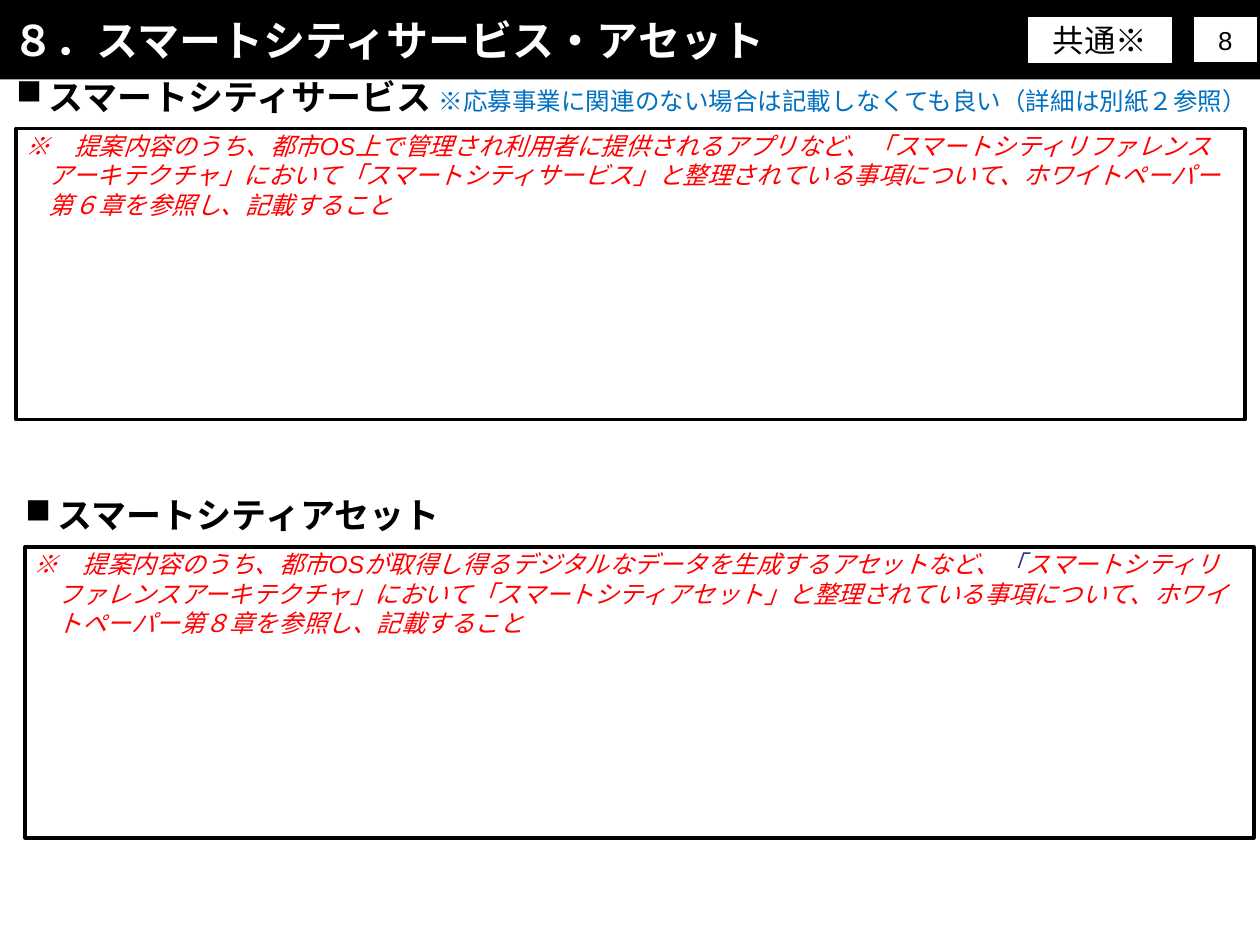
from dataclasses import dataclass
from typing import Optional

from lxml.etree import SubElement
from pptx import Presentation
from pptx.dml.color import RGBColor
from pptx.enum.shapes import MSO_SHAPE as Shape
from pptx.enum.text import MSO_ANCHOR as Anchor, PP_ALIGN as Align
from pptx.oxml.ns import qn
from pptx.util import Inches, Pt

BLACK, WHITE, RED, BLUE, NAVY = "000000", "FFFFFF", "FF0000", "0070C0", "333399"
JAPANESE_FONT = "Noto Sans CJK JP"


@dataclass
class Box:
    left: float
    top: float
    width: float
    height: float

    def moved(self, right: float, down: float) -> "Box":
        return Box(self.left + right, self.top + down, self.width, self.height)

    def lengths(self) -> list:
        return [Inches(n) for n in (self.left, self.top, self.width, self.height)]


@dataclass
class Style:
    size: float
    color: str
    font: str = "Arial"
    bold: bool = False
    italic: bool = False
    align: Align = Align.LEFT
    indent: float = 0
    bullet: Optional[str] = None


@dataclass
class Section:
    right: float
    down: float
    heading: str
    note: list[tuple[str, str]]


HEADING = Style(20, BLACK, "Roboto", bold=True, indent=0.26, bullet="■")
NOTE = Style(14, RED, italic=True, indent=0.19)
HEADING_BOX = Box(0.03, 0.55, 4.69, 0.44)
FRAME_BOX = Box(0.13, 1.02, 9.75, 2.31)
NOTE_BOX = Box(0.1, 0.99, 9.72, 0.81)

SECTIONS = [
    Section(0, 0, "スマートシティサービス", [
        ("※　提案内容のうち、都市OS上で管理され利用者に提供されるアプリなど、"
         "「スマートシティリファレンスアーキテクチャ」において「スマートシティサービス」と"
         "整理されている事項について、ホワイトペーパー第６章を参照し、記載すること", RED),
    ]),
    Section(0.07, 3.32, "スマートシティアセット", [
        ("※　提案内容のうち、都市OSが取得し得るデジタルなデータを生成するアセットなど、", RED),
        ("「", NAVY),
        ("スマートシティリファレンスアーキテクチャ」において「スマートシティアセット」と"
         "整理されている事項について、ホワイトペーパー第８章を参照し、記載すること", RED),
    ]),
]


def rgb(color: str) -> RGBColor:
    return RGBColor.from_string(color)


def write(shape, runs: list[tuple[str, str]], style: Style, anchor=Anchor.TOP) -> None:
    frame = shape.text_frame
    frame.word_wrap = True
    frame.vertical_anchor = anchor
    paragraph = frame.paragraphs[0]
    paragraph.alignment = style.align
    properties = paragraph._p.get_or_add_pPr()
    if style.indent:
        properties.set("marL", str(Inches(style.indent)))
        properties.set("indent", str(-Inches(style.indent)))
    if style.bullet:
        SubElement(properties, qn("a:buChar"), char=style.bullet)
        paragraph.space_before = Pt(1)
    font = paragraph.font
    font.size, font.name = Pt(style.size), style.font
    font.bold, font.italic = style.bold, style.italic
    font.color.rgb = rgb(style.color)
    SubElement(font._element, qn("a:ea"), typeface=JAPANESE_FONT)
    for text, color in runs:
        run = paragraph.add_run()
        run.text = text
        if color != style.color:
            run.font.color.rgb = rgb(color)


def add_text(slide, box: Box, runs: list[tuple[str, str]], style: Style) -> None:
    write(slide.shapes.add_textbox(*box.lengths()), runs, style)


def add_rectangle(slide, box: Box, line_width: float, fill: Optional[str] = None):
    shape = slide.shapes.add_shape(Shape.RECTANGLE, *box.lengths())
    shape.shadow.inherit = False
    if fill:
        shape.fill.solid()
        shape.fill.fore_color.rgb = rgb(fill)
    else:
        shape.fill.background()
    shape.line.color.rgb = rgb(BLACK)
    shape.line.width = Pt(line_width)
    return shape


def add_label(slide, box: Box, text: str, size: float, line_width: float) -> None:
    shape = add_rectangle(slide, box, line_width, WHITE)
    style = Style(size, BLACK, align=Align.CENTER)
    write(shape, [(text, BLACK)], style, Anchor.MIDDLE)


def format_title(slide, text: str) -> None:
    title = slide.shapes.title
    title.left, title.top, title.width, title.height = Box(0, 0, 10, 0.63).lengths()
    title.fill.solid()
    title.fill.fore_color.rgb = rgb(BLACK)
    style = Style(24, WHITE, JAPANESE_FONT, bold=True)
    write(title, [(text, WHITE)], style, Anchor.MIDDLE)


def add_section(slide, section: Section) -> None:
    heading, frame, note = (
        box.moved(section.right, section.down)
        for box in (HEADING_BOX, FRAME_BOX, NOTE_BOX)
    )
    add_rectangle(slide, frame, 2.25)
    add_text(slide, heading, [(section.heading, BLACK)], HEADING)
    add_text(slide, note, section.note, NOTE)


def main() -> None:
    presentation = Presentation()
    presentation.slide_width, presentation.slide_height = Inches(10), Inches(7.5)
    slide = presentation.slides.add_slide(presentation.slide_layouts[5])
    format_title(slide, "８．スマートシティサービス・アセット")
    for section in SECTIONS:
        add_section(slide, section)
    add_label(slide, Box(8.15, 0.13, 1.16, 0.38), "共通※", 18, 1)
    remark = "※応募事業に関連のない場合は記載しなくても良い（詳細は別紙２参照）"
    add_text(slide, Box(3.27, 0.63, 6.73, 0.34), [(remark, BLUE)],
             Style(14, BLUE, align=Align.RIGHT))
    add_label(slide, Box(9.47, 0.13, 0.51, 0.37), "8", 14.8, 0.75)
    presentation.save("out.pptx")


if __name__ == "__main__":
    main()
